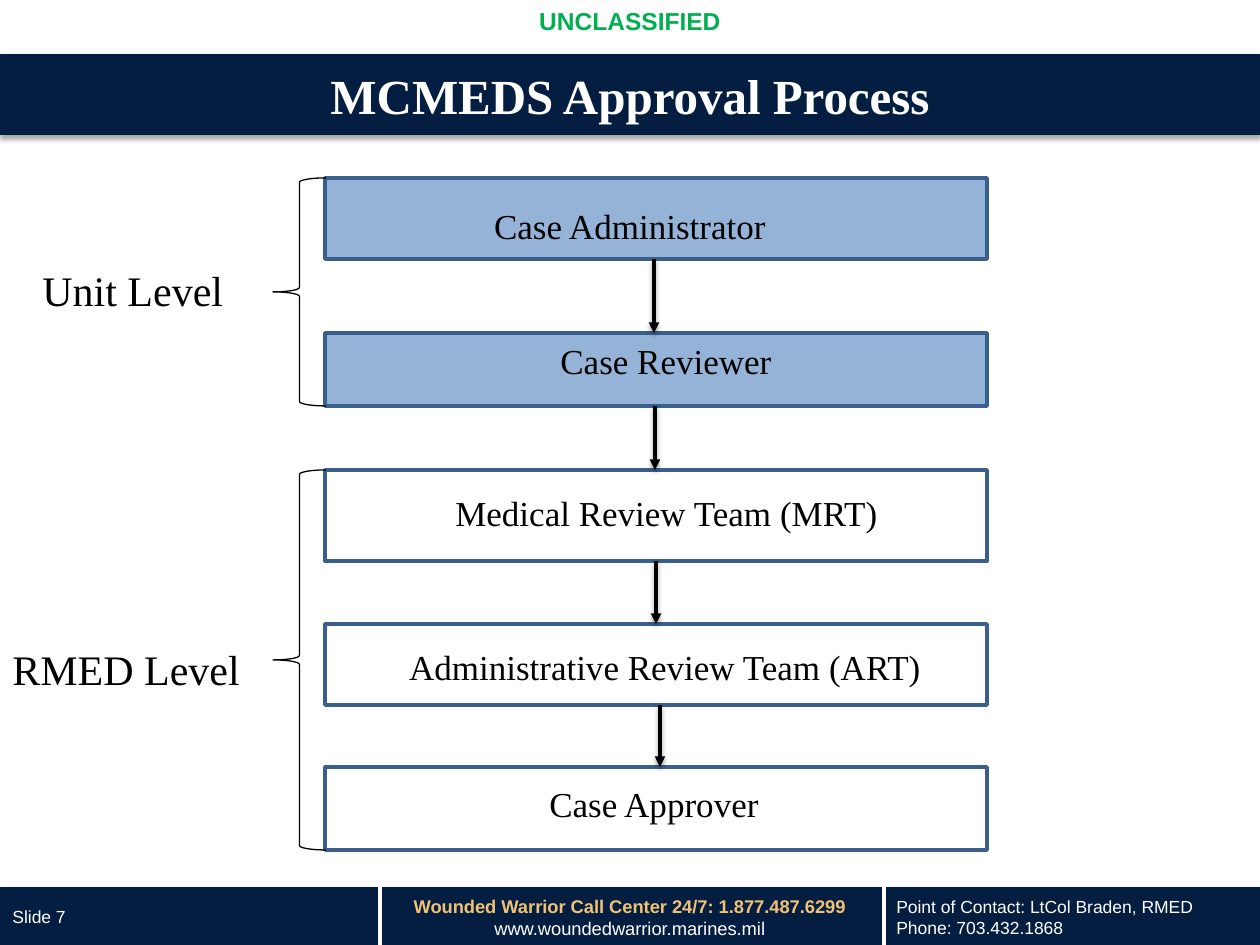
import pptx
import pptx.util
import pptx.dml.color
import pptx.enum.shapes
import pptx.enum.text
import pptx.oxml
import pptx.oxml.ns

SHAPE = pptx.enum.shapes.MSO_SHAPE
ALIGN = pptx.enum.text.PP_ALIGN
ANCHOR = pptx.enum.text.MSO_ANCHOR
SERIF, SANS = "Times New Roman", "Arial"
NAVY, BLUE, EDGE = "041E42", "95B3D7", "3A5F8C"
WHITE, BLACK, GOLD, GREEN = "FFFFFF", "000000", "F1C274", "00B050"
PX_PER_INCH = 126


def px(length):
    return pptx.util.Emu(round(length * 914400 / PX_PER_INCH))


def rgb(value):
    return pptx.dml.color.RGBColor.from_string(value)


def effect_xml(opacity=0, distance=0):
    """Effect list with a downward shadow, or empty when opacity is 0."""
    shadow = ""
    if opacity:
        shadow = (f'<a:outerShdw blurRad="{pptx.util.Pt(3.1)}" dist="{pptx.util.Pt(distance)}" '
                  'dir="5400000" rotWithShape="0"><a:srgbClr val="000000">'
                  f'<a:alpha val="{opacity * 1000}"/></a:srgbClr></a:outerShdw>')
    ns = pptx.oxml.ns.nsdecls("a")
    return pptx.oxml.parse_xml(f"<a:effectLst {ns}>{shadow}</a:effectLst>")


class Deck:
    def __init__(self):
        self.prs = pptx.Presentation()
        self.prs.slide_width, self.prs.slide_height = px(1260), px(945)
        self.slide = self.prs.slides.add_slide(self.prs.slide_layouts[6])

    def shape(self, kind, box, fill=None, line=None, width=2, shadow=False):
        item = self.slide.shapes.add_shape(kind, *map(px, box))
        if fill:
            item.fill.solid()
            item.fill.fore_color.rgb = rgb(fill)
        else:
            item.fill.background()
        if line:
            item.line.color.rgb = rgb(line)
            item.line.width = pptx.util.Pt(width)
        else:
            item.line.fill.background()
        if shadow:
            item._element.spPr.append(effect_xml(35, 1.8))
        else:
            item.shadow.inherit = False

    def text(self, box, lines, size, color=BLACK, font=SERIF, bold=False,
             align=ALIGN.CENTER, anchor=ANCHOR.TOP):
        """Each line is a string, or (string, color, bold) to override the style."""
        frame = self.slide.shapes.add_textbox(*map(px, box)).text_frame
        frame.word_wrap = True
        frame.vertical_anchor = anchor
        for index, line in enumerate(lines):
            words, ink, heavy = (line, color, bold) if isinstance(line, str) else line
            paragraph = frame.add_paragraph() if index else frame.paragraphs[0]
            paragraph.alignment = align
            run = paragraph.add_run()
            run.text = words
            run.font.name = font
            run.font.size = pptx.util.Pt(size)
            run.font.bold = heavy
            run.font.color.rgb = rgb(ink)

    def line(self, x, top, bottom, color, arrow=False):
        item = self.slide.shapes.add_connector(
            pptx.enum.shapes.MSO_CONNECTOR.STRAIGHT, px(x), px(top), px(x), px(bottom))
        item.line.color.rgb = rgb(color)
        item.line.width = pptx.util.Pt(2)
        if arrow:
            ns = pptx.oxml.ns.nsdecls("a")
            item.line._get_or_add_ln().append(
                pptx.oxml.parse_xml(f'<a:tailEnd {ns} type="triangle"/>'))
        item._element.spPr.append(effect_xml(38, 1.6) if arrow else effect_xml())


def main():
    deck = Deck()

    # Footer
    deck.shape(SHAPE.RECTANGLE, (0, 887, 1260, 58), NAVY, shadow=True)
    deck.text((396, 889, 468, 56),
              [("Wounded Warrior Call Center 24/7: 1.877.487.6299", GOLD, True),
               "www.woundedwarrior.marines.mil"], 10.5, WHITE, SANS)
    for divider in (884, 380):
        deck.line(divider, 867, 945, WHITE)
    footer = dict(size=10, color=WHITE, font=SANS, align=ALIGN.LEFT, anchor=ANCHOR.MIDDLE)
    deck.text((884, 889, 376, 56),
              ["Point of Contact: LtCol Braden, RMED", "Phone: 703.432.1868"], **footer)
    deck.text((0, 892, 294, 50), ["Slide 7"], **footer)

    # Classification and title banner
    deck.text((0, 0, 1260, 43), ["UNCLASSIFIED"], 14, GREEN, SANS, bold=True)
    deck.shape(SHAPE.RECTANGLE, (0, 54, 1260, 81), NAVY, shadow=True)
    deck.text((0, 54, 1260, 81), ["MCMEDS Approval Process"], 28, WHITE, bold=True,
              anchor=ANCHOR.MIDDLE)

    # Approval steps: box top, height, fill, label, label box
    steps = [
        (178, 81, BLUE, "Case Administrator", (63, 198, 1134, 56)),
        (333, 73, BLUE, "Case Reviewer", (367, 333, 598, 73)),
        (470, 91, WHITE, "Medical Review Team (MRT)", (180, 485, 973, 56)),
        (624, 81, WHITE, "Administrative Review Team (ART)", (93, 639, 1144, 56)),
        (767, 83, WHITE, "Case Approver", (344, 776, 620, 56)),
    ]
    for top, height, fill, label, label_box in steps:
        deck.shape(SHAPE.FLOWCHART_PROCESS, (325, top, 662, height), fill, EDGE)
        deck.text(label_box, [label], 20)

    # Arrows from each step to the next
    for x, upper, lower in zip((654, 655, 656, 660), steps, steps[1:]):
        deck.line(x, upper[0] + upper[1], lower[0], BLACK, arrow=True)

    # Level braces, each spanning its first to last step
    levels = [("Unit Level", steps[:2], (30, 258, 262, 63)),
              ("RMED Level", steps[2:], (0, 637, 344, 63))]
    for level, members, label_box in levels:
        top, bottom = members[0][0], members[-1][0] + members[-1][1]
        deck.shape(SHAPE.LEFT_BRACE, (273, top, 53, bottom - top), line=BLACK, width=0.75)
        deck.text(label_box, [level], 24, align=ALIGN.LEFT)

    deck.prs.save("out.pptx")


if __name__ == "__main__":
    main()
